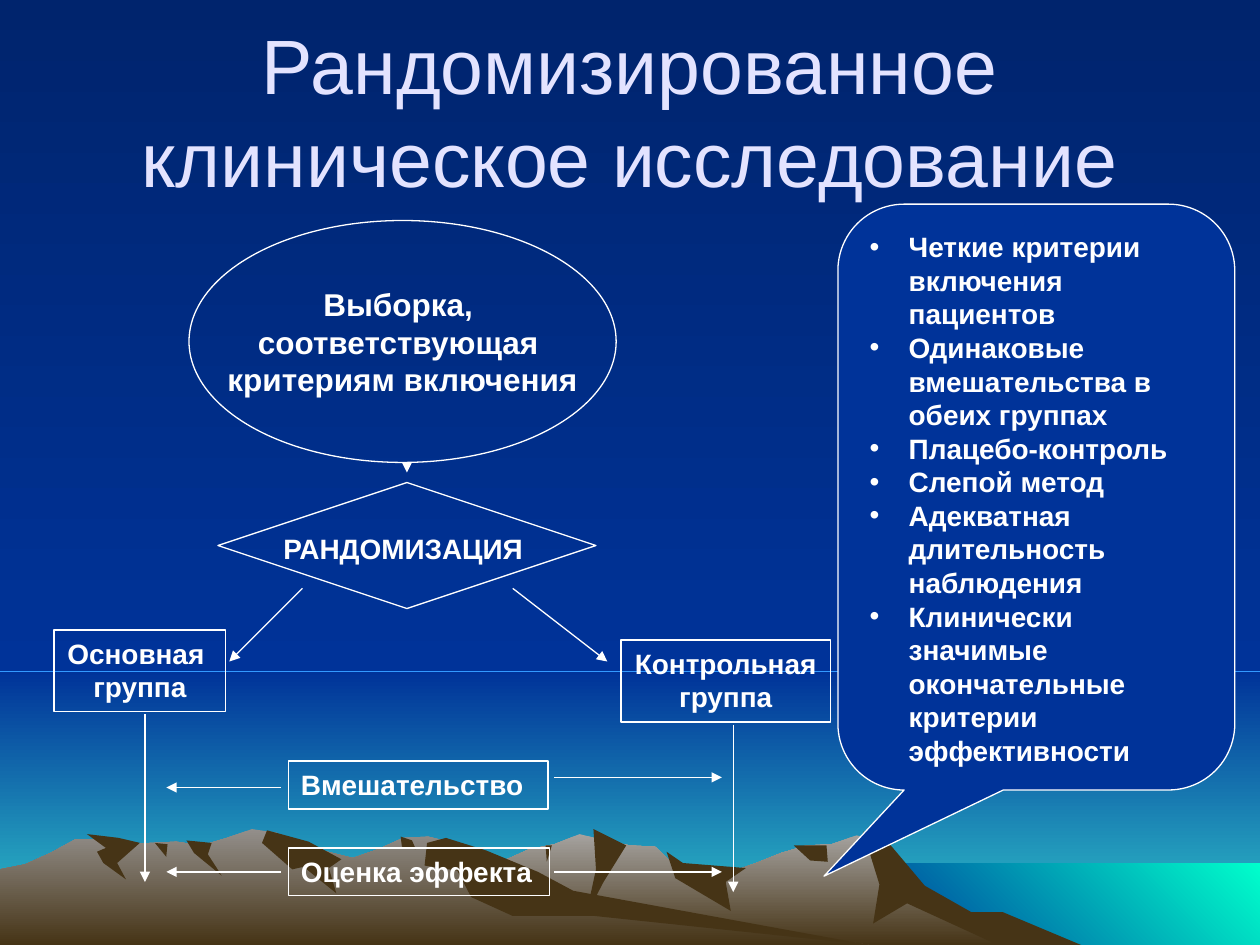
from pptx import Presentation
from pptx.dml.color import RGBColor
from pptx.enum.shapes import MSO_CONNECTOR, MSO_SHAPE
from pptx.enum.text import MSO_ANCHOR, MSO_AUTO_SIZE, PP_ALIGN
from pptx.oxml.ns import qn
from pptx.util import Inches, Pt
from lxml.etree import SubElement

WHITE, LAVENDER, NAVY, ROCK = "FFFFFF", "E3E3FF", "003399", "463416"
DOWNWARD, UP_RIGHT = 270, 45
COLUMNS, ROWS = 1000, 750
RIDGE_STEP = 20

presentation = Presentation()
presentation.slide_width = Inches(10)
presentation.slide_height = Inches(7.5)
column = presentation.slide_width // COLUMNS
row = presentation.slide_height // ROWS
slide = presentation.slides.add_slide(presentation.slide_layouts[6])


def color(value):
    return RGBColor.from_string(value)


def add_node(kind, box, lines, size, align, frame_format, ink=WHITE, bold=True):
    left, top, width, height = box
    place = left * column, top * row, width * column, height * row
    if kind is None:
        shape = slide.shapes.add_textbox(*place)
    else:
        shape = slide.shapes.add_shape(kind, *place)
        shape.shadow.inherit = False
        shape.fill.background()
        shape.line.color.rgb = color(WHITE)
        shape.line.width = Pt(0.75)
    frame = shape.text_frame
    for name, value in frame_format.items():
        setattr(frame, name, value)
    for index, line in enumerate(lines):
        paragraph = frame.paragraphs[0] if index == 0 else frame.add_paragraph()
        paragraph.alignment = align
        run = paragraph.add_run()
        run.text = line
        run.font.color.rgb = color(ink)
        for name, value in {"name": "Arial", "size": Pt(size), "bold": bold}.items():
            setattr(run.font, name, value)
    return shape


slide.background.fill.solid()
slide.background.fill.fore_color.rgb = color("3399FF")

horizon, shore_left, shore_top = 533, 683, 685
bands = [
    ((0, horizon, COLUMNS, ROWS - horizon), (NAVY, "33CCCC"), DOWNWARD),
    ((0, 0, COLUMNS, horizon), ("00246D", NAVY), DOWNWARD),
    ((shore_left, shore_top, COLUMNS - shore_left, ROWS - shore_top), (NAVY, "00FFCC"), UP_RIGHT),
]
scenery = []
for (left, top, width, height), colors, angle in bands:
    band = slide.shapes.add_shape(MSO_SHAPE.RECTANGLE, left * column, top * row,
                                  width * column, height * row)
    scenery.append((band, colors, angle))

back_ridge = {
    "left": 260, "right": 821, "light": "A5A29F",
    "heights": [0, 13, 25, 37, 47, 54, 61, 67, 76, 80, 88, 83, 79, 78, 59, 54, 58, 65, 73,
                79, 80, 87, 81, 56, 42, 29, 22, 11],
    "shadows": {
        "right slope": [(685, 90), (707, 79), (734, 47), (771, 26), (796, 26), (858, 0),
                        (792, 0), (720, 33), (693, 17), (698, 48)],
        "left peak": [(471, 92), (497, 79), (479, 50), (465, 23), (473, 60)],
        "saddle": [(529, 74), (542, 65), (592, 61), (576, 50), (580, 27), (536, 53)],
        "right notch": [(630, 79), (656, 79), (657, 66), (643, 67)],
        "left notch": [(433, 79), (438, 79), (434, 66)],
    },
}
front_ridge = {
    "left": 0, "right": 690, "light": "938F8B",
    "heights": [60, 64, 73, 84, 84, 80, 81, 82, 79, 85, 92, 89, 70, 74, 69, 76, 85, 86, 81,
                69, 57, 45, 37],
    "shadows": {
        "main peak": [(212, 91), (245, 82), (271, 68), (261, 61), (267, 41), (241, 62),
                      (232, 60), (208, 81)],
        "right slope": [(339, 81), (354, 85), (386, 75), (427, 58), (455, 43), (690, 0),
                        (472, 23), (407, 23), (374, 38), (363, 59), (337, 63)],
        "right notch": [(318, 86), (327, 83), (330, 76), (319, 78)],
        "middle slope": [(148, 83), (168, 81), (165, 72), (176, 55), (154, 73)],
        "middle notch": [(123, 81), (133, 80), (132, 70)],
        "left peak": [(69, 88), (94, 85), (111, 81), (93, 65), (100, 52), (82, 65),
                      (77, 74), (84, 77)],
    },
}
for ridge in (back_ridge, front_ridge):
    skyline = [(ridge["left"] + index * RIDGE_STEP, height)
               for index, height in enumerate(ridge["heights"])]
    outline = [(ridge["left"], 0), *skyline, (ridge["right"], 0)]
    facets = [(outline, (ridge["light"], ROCK))]
    facets += [(corners, (ROCK,)) for corners in ridge["shadows"].values()]
    for corners, colors in facets:
        points = [(across, ROWS - height) for across, height in corners]
        builder = slide.shapes.build_freeform(*points[0], scale=(column, row))
        builder.add_line_segments(points[1:], close=True)
        scenery.append((builder.convert_to_shape(), colors, DOWNWARD))

for shape, colors, angle in scenery:
    shape.shadow.inherit = False
    shape.line.fill.background()
    if len(colors) == 1:
        shape.fill.solid()
        shape.fill.fore_color.rgb = color(colors[0])
    else:
        shape.fill.gradient()
        shape.fill.gradient_angle = angle
        for stop, position, shade in zip(shape.fill.gradient_stops, (0, 1), colors):
            stop.position = position
            stop.color.rgb = color(shade)

center, left_aligned = PP_ALIGN.CENTER, PP_ALIGN.LEFT
wrapped_top = {"word_wrap": True, "vertical_anchor": MSO_ANCHOR.TOP}
wrapped_middle = {"word_wrap": True, "vertical_anchor": MSO_ANCHOR.MIDDLE}
middle = {**wrapped_middle, "word_wrap": False}
wrapped_fit = {**wrapped_top, "auto_size": MSO_AUTO_SIZE.SHAPE_TO_FIT_TEXT}
fit = {**wrapped_fit, "word_wrap": False}

add_node(None, (75, 25, 850, 125), ["Рандомизированное клиническое исследование"], 44,
         center, wrapped_middle, LAVENDER, False)
add_node(MSO_SHAPE.OVAL, (150, 175, 339, 192),
         ["Выборка, ", "соответствующая ", "критериям включения"], 18, center, middle)
add_node(MSO_SHAPE.FLOWCHART_DECISION, (173, 383, 300, 100), [], 16, center, middle)
add_node(None, (215, 417, 213, 37), ["РАНДОМИЗАЦИЯ"], 16, left_aligned, fit)

groups = [((43, 500, 136, 65), ["Основная ", "группа"]),
          ((493, 508, 166, 65), ["Контрольная", "группа"])]
for box, lines in groups:
    add_node(MSO_SHAPE.RECTANGLE, box, lines, 16, center, fit)

stages = [((229, 604, 206, 38), "Вмешательство"), ((229, 673, 207, 38), "Оценка эффекта")]
for box, label in stages:
    add_node(MSO_SHAPE.RECTANGLE, box, [label], 16, left_aligned, wrapped_fit)

sample_to_decision = [(323, 367, 323, 375)]
decision_to_groups = [(240, 467, 182, 525), (407, 467, 482, 525)]
group_timelines = [(across, top, across, top + 133) for across, top in ((115, 567), (582, 575))]
stage_to_timelines = []
for left_level, right_level in ((625, 617), (692, 692)):
    stage_to_timelines.append((223, left_level, 132, left_level))
    stage_to_timelines.append((440, right_level, 573, right_level))

for start_x, start_y, end_x, end_y in (sample_to_decision + decision_to_groups
                                       + group_timelines + stage_to_timelines):
    arrow = slide.shapes.add_connector(MSO_CONNECTOR.STRAIGHT, start_x * column, start_y * row,
                                       end_x * column, end_y * row)
    arrow.line.color.rgb = color(WHITE)
    arrow.line.width = Pt(0.75)
    SubElement(arrow.line._get_or_add_ln(), qn("a:tailEnd")).set("type", "triangle")
    SubElement(arrow._element.spPr, qn("a:effectLst"))

criteria = [
    "Четкие критерии включения пациентов",
    "Одинаковые вмешательства в обеих группах",
    "Плацебо-контроль",
    "Слепой метод",
    "Адекватная длительность наблюдения",
    "Клинически значимые окончательные критерии эффективности",
]
callout = add_node(MSO_SHAPE.ROUNDED_RECTANGULAR_CALLOUT, (665, 162, 315, 465), criteria, 16,
                   left_aligned, wrapped_top)
callout.fill.solid()
callout.fill.fore_color.rgb = color(NAVY)
pointer_x, pointer_y, corner = -0.535, 0.647, 0.167
for index, adjustment in enumerate((pointer_x, pointer_y, corner)):
    callout.adjustments[index] = adjustment
for paragraph in callout.text_frame.paragraphs:
    properties = paragraph._p.get_or_add_pPr()
    for name, value in {"marL": Inches(0.31), "indent": Inches(-0.31)}.items():
        properties.set(name, str(value))
    SubElement(properties, qn("a:buFont")).set("typeface", "Arial")
    SubElement(properties, qn("a:buChar")).set("char", "•")

presentation.save("out.pptx")
